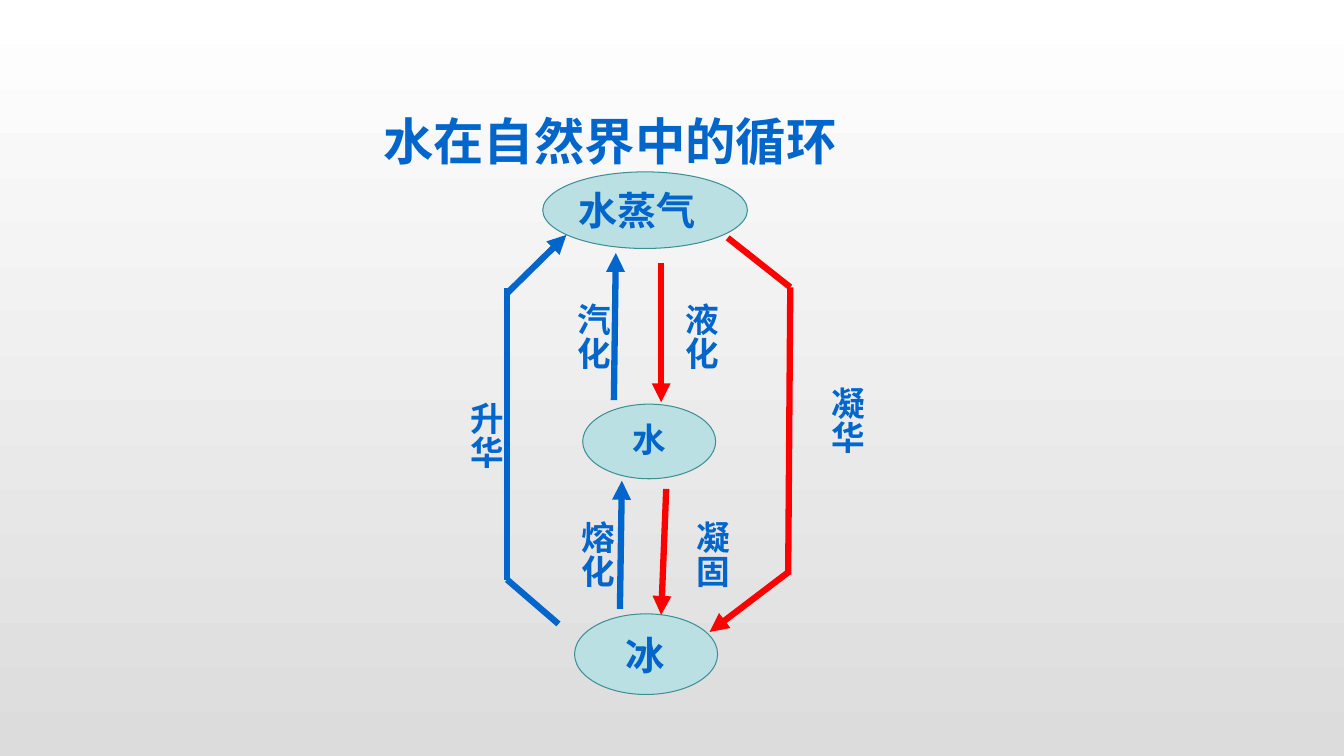
"""Build a slide showing how water cycles between vapour, liquid and ice."""
from dataclasses import dataclass

from lxml import etree
from pptx import Presentation
from pptx.dml.color import RGBColor
from pptx.enum import shapes, text
from pptx.oxml import ns
from pptx.util import Pt

BLUE = RGBColor(0x00, 0x66, 0xCC)
RED = RGBColor(0xFF, 0x00, 0x00)
PALE = RGBColor(0xBB, 0xE0, 0xE3)
TEAL = RGBColor(0x3D, 0x8F, 0x95)
WHITE = RGBColor(0xFF, 0xFF, 0xFF)
GREY = RGBColor(0xDC, 0xDC, 0xDC)
FONT = "Noto Sans CJK SC"
SIDE = 43.9


@dataclass
class Box:
    x: float
    y: float
    w: float
    h: float


@dataclass
class State:
    oval: Box
    label: Box
    name: str
    size: int


@dataclass
class Change:
    x: float
    y: float
    h: float
    name: str


@dataclass
class Line:
    x1: float
    y1: float
    x2: float
    y2: float
    color: RGBColor
    head: bool = True


STATES = [
    State(Box(387.7, 122.8, 146.2, 54.7), Box(406.1, 129.6, 98.6, 41), "水蒸气", 28),
    State(Box(416.2, 288.7, 95, 53.3), Box(445, 295.9, 38.9, 36.7), "水", 24),
    State(Box(410.4, 438.5, 102.2, 57.6), Box(439.9, 447.1, 42.5, 41), "冰", 28),
]
CHANGES = [
    Change(397.4, 209.5, 79.9, "汽化"),
    Change(474.5, 209.5, 90.7, "液化"),
    Change(482.4, 365, 79.9, "凝固"),
    Change(400.3, 365, 85, "熔化"),
    Change(321.1, 280.1, 108, "升华"),
    Change(578.9, 269.3, 73.4, "凝华"),
]
LINES = [
    Line(442.8, 434.9, 444.2, 343.4, BLUE),
    Line(438.5, 285.8, 439.9, 180.7, BLUE),
    Line(475.9, 349.2, 472.3, 439.2, RED),
    Line(472.3, 187.9, 472.3, 287.3, RED),
    Line(398.9, 445.7, 362.2, 414, BLUE, False),
    Line(362.2, 414, 362.2, 205.9, BLUE, False),
    Line(362.2, 209.5, 404.6, 167.8, BLUE),
    Line(519.8, 169.9, 564.5, 205.2, RED, False),
    Line(564.5, 205.2, 563, 410.4, RED, False),
    Line(563.8, 408.2, 506.9, 451.4, RED),
]


def place(box: Box) -> tuple:
    return Pt(box.x), Pt(box.y), Pt(box.w), Pt(box.h)


def write(frame, words: str, size: int) -> None:
    frame.vertical_anchor = text.MSO_ANCHOR.TOP
    par = frame.paragraphs[0]
    par.alignment = text.PP_ALIGN.LEFT
    run = par.add_run()
    run.text = words
    run.font.size = Pt(size)
    run.font.bold = True
    run.font.color.rgb = BLUE
    run.font.name = FONT
    props = run._r.get_or_add_rPr()
    etree.SubElement(props, ns.qn("a:ea")).set("typeface", FONT)


def add_text(slide, box: Box, words: str, size: int, tall: bool = False) -> None:
    frame = slide.shapes.add_textbox(*place(box)).text_frame
    frame.word_wrap = tall
    if tall:
        frame._txBody.bodyPr.set("vert", "eaVert")
    write(frame, words, size)


def add_oval(slide, box: Box) -> None:
    oval = slide.shapes.add_shape(shapes.MSO_SHAPE.OVAL, *place(box))
    oval.shadow.inherit = False
    oval.fill.solid()
    oval.fill.fore_color.rgb = PALE
    oval.line.color.rgb = TEAL
    oval.line.width = Pt(0.75)


def add_line(slide, line: Line) -> None:
    link = slide.shapes.add_connector(
        shapes.MSO_CONNECTOR.STRAIGHT,
        Pt(line.x1), Pt(line.y1), Pt(line.x2), Pt(line.y2))
    link.line.color.rgb = line.color
    link.line.width = Pt(4.5)
    if line.head:
        edge = link.line._get_or_add_ln()
        etree.SubElement(edge, ns.qn("a:tailEnd")).set("type", "triangle")
    etree.SubElement(link._element.spPr, ns.qn("a:effectLst"))


def add_title(slide, box: Box, words: str) -> None:
    title = slide.shapes.title
    title.left, title.top, title.width, title.height = place(box)
    title.text_frame.word_wrap = True
    title.text_frame.auto_size = text.MSO_AUTO_SIZE.NONE
    write(title.text_frame, words, 36)


def paint(slide) -> None:
    fill = slide.background.fill
    fill.gradient()
    fill.gradient_angle = 270
    for stop, color, spot in zip(fill.gradient_stops, (WHITE, GREY), (0, 1)):
        stop.color.rgb = color
        stop.position = spot


def main() -> None:
    deck = Presentation()
    deck.slide_width, deck.slide_height = Pt(960), Pt(540)
    slide = deck.slides.add_slide(deck.slide_layouts.get_by_name("Title Only"))
    paint(slide)
    add_title(slide, Box(266.4, 74.9, 365, 50.4), "水在自然界中的循环")
    for state in STATES:
        add_oval(slide, state.oval)
        add_text(slide, state.label, state.name, state.size)
    for line in LINES:
        add_line(slide, line)
    for item in CHANGES:
        add_text(slide, Box(item.x, item.y, SIDE, item.h), item.name, 24, True)
    deck.save("out.pptx")


if __name__ == "__main__":
    main()
